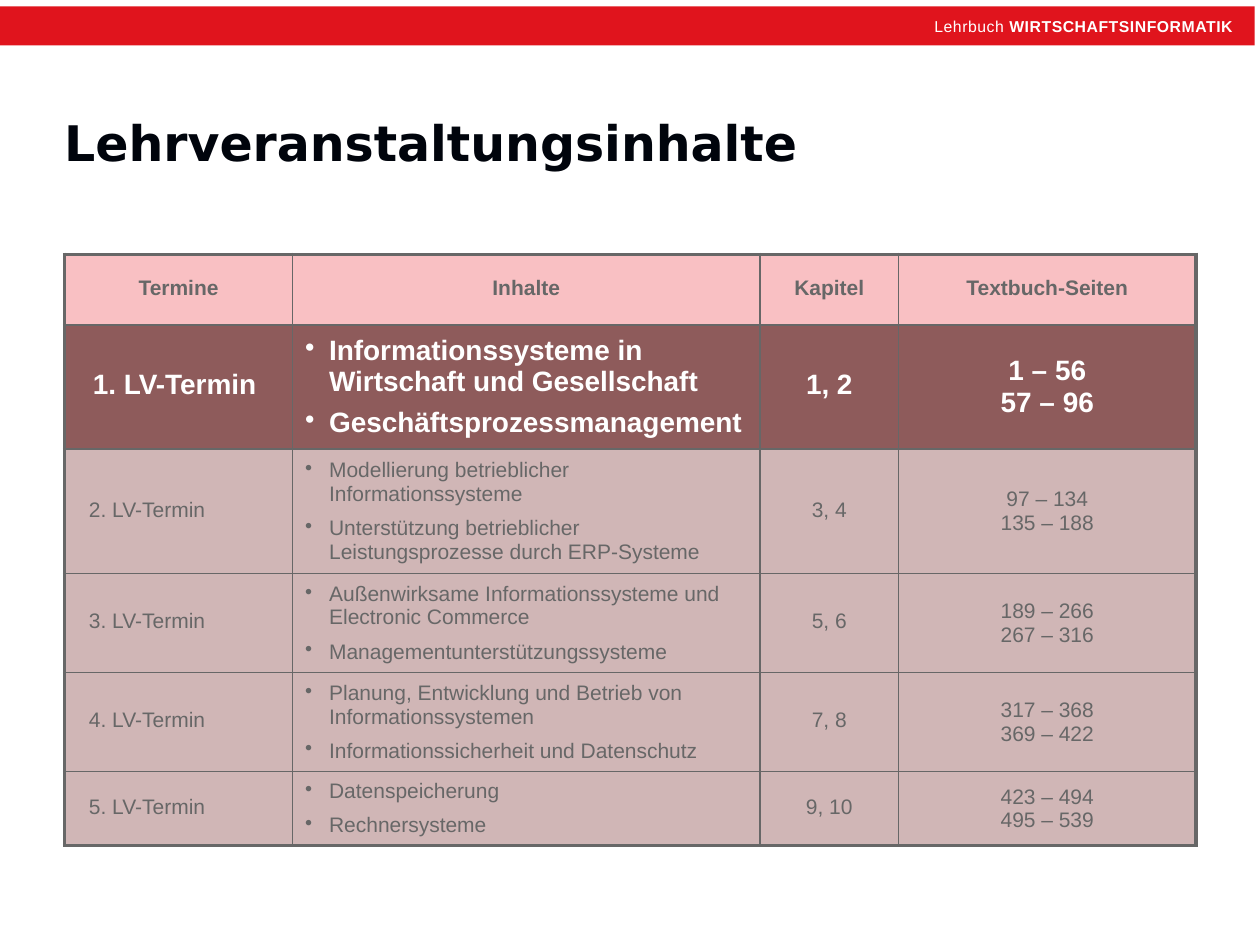
"""Build the course contents slide with its schedule table."""
from lxml.etree import SubElement
from pptx import Presentation
from pptx.dml.color import RGBColor
from pptx.enum.shapes import MSO_SHAPE
from pptx.enum.text import MSO_ANCHOR, MSO_AUTO_SIZE, PP_ALIGN
from pptx.oxml.ns import qn
from pptx.util import Pt

RED = RGBColor(0xE0, 0x14, 0x1D)
WHITE = RGBColor(0xFF, 0xFF, 0xFF)
INK = RGBColor(0x00, 0x04, 0x0C)
GREY = RGBColor(0x67, 0x67, 0x67)
PINK = RGBColor(0xF9, 0xC0, 0xC3)
BROWN = RGBColor(0x8E, 0x5B, 0x5B)
ROSE = RGBColor(0xD0, 0xB6, 0xB6)

ROWS = [
    (["Termine"], ["Inhalte"], ["Kapitel"], ["Textbuch-Seiten"]),
    (["1. LV-Termin"],
     ["Informationssysteme in Wirtschaft und Gesellschaft", "Geschäftsprozessmanagement"],
     ["1, 2"], ["1 – 56", "57 – 96"]),
    (["2. LV-Termin"],
     ["Modellierung betrieblicher Informationssysteme",
      "Unterstützung betrieblicher Leistungsprozesse durch ERP-Systeme"],
     ["3, 4"], ["97 – 134", "135 – 188"]),
    (["3. LV-Termin"],
     ["Außenwirksame Informationssysteme und Electronic Commerce",
      "Managementunterstützungssysteme"],
     ["5, 6"], ["189 – 266", "267 – 316"]),
    (["4. LV-Termin"],
     ["Planung, Entwicklung und Betrieb von Informationssystemen",
      "Informationssicherheit und Datenschutz"],
     ["7, 8"], ["317 – 368", "369 – 422"]),
    (["5. LV-Termin"], ["Datenspeicherung", "Rechnersysteme"],
     ["9, 10"], ["423 – 494", "495 – 539"]),
]
COL_WIDTHS = [130.3, 267.1, 79.2, 170]
ROW_HEIGHTS = [40.3, 70.6, 71.2, 56.6, 56.6, 42.4]


def add_run(p, text, size, color, bold, font="Arial"):
    r = p.add_run()
    r.text = text
    r.font.size = Pt(size)
    r.font.name = font
    r.font.bold = bold
    r.font.color.rgb = color
    return r


def add_border(cell, side, width):
    ln = SubElement(cell._tc.get_or_add_tcPr(), qn(f"a:ln{side}"), w=str(Pt(width)))
    fill = SubElement(ln, qn("a:solidFill"))
    SubElement(fill, qn("a:srgbClr"), val=str(GREY))


prs = Presentation()
prs.slide_width, prs.slide_height = Pt(720), Pt(540)
s = prs.slides.add_slide(prs.slide_layouts[5])

bar = s.shapes.add_shape(MSO_SHAPE.RECTANGLE, Pt(0), Pt(3.6), Pt(717), Pt(22.3))
bar.shadow.inherit = False
bar.fill.solid()
bar.fill.fore_color.rgb = RED
bar.line.fill.background()

header = s.shapes.add_textbox(Pt(445), Pt(5.8), Pt(266.4), Pt(18))
header.text_frame.word_wrap = True
p = header.text_frame.paragraphs[0]
p.alignment = PP_ALIGN.RIGHT
for text, bold in [("Lehrbuch ", False), ("WIRTSCHAFTSINFORMATIK", True)]:
    r = add_run(p, text, 9, WHITE, bold)
    r.font._element.set("spc", "30")

title = s.shapes.title
title.left, title.top, title.width, title.height = Pt(29.5), Pt(51), Pt(648), Pt(60.5)
tf = title.text_frame
tf.auto_size = MSO_AUTO_SIZE.NONE
tf.vertical_anchor = MSO_ANCHOR.MIDDLE
p = tf.paragraphs[0]
p.alignment = PP_ALIGN.LEFT
add_run(p, "Lehrveranstaltungsinhalte", 28, INK, True, "DejaVu Sans")

frame = s.shapes.add_table(len(ROWS), len(COL_WIDTHS), Pt(36.9), Pt(145.4),
                           Pt(sum(COL_WIDTHS)), Pt(sum(ROW_HEIGHTS)))
table = frame.table
table.first_row = False
table.horz_banding = False
for column, width in zip(table.columns, COL_WIDTHS):
    column.width = Pt(width)
for row, height in zip(table.rows, ROW_HEIGHTS):
    row.height = Pt(height)

last_row, last_col = len(ROWS) - 1, len(COL_WIDTHS) - 1
for i, row in enumerate(ROWS):
    fill = {0: PINK, 1: BROWN}.get(i, ROSE)
    size = 16 if i == 1 else 12
    color = WHITE if i == 1 else GREY
    for j, lines in enumerate(row):
        cell = table.cell(i, j)
        cell.vertical_anchor = MSO_ANCHOR.MIDDLE
        cell.margin_left = cell.margin_right = Pt(7.2)
        cell.margin_top = cell.margin_bottom = Pt(3.6)
        for side, outer in [("L", j == 0), ("R", j == last_col),
                            ("T", i == 0), ("B", i == last_row)]:
            add_border(cell, side, 2.25 if outer else 1)
        cell.fill.solid()
        cell.fill.fore_color.rgb = fill
        tf = cell.text_frame
        for n, text in enumerate(lines):
            p = tf.add_paragraph() if n else tf.paragraphs[0]
            if i > 0 and j < 2:
                p.alignment = PP_ALIGN.LEFT
            else:
                p.alignment = PP_ALIGN.CENTER
            if i == 0 or j in (0, 2):
                p.line_spacing = 0.85
            elif j == 1:
                p.space_after = Pt(6)
                pPr = p._p.get_or_add_pPr()
                pPr.set("marL", str(Pt(13.7)))
                pPr.set("indent", str(Pt(-13.7)))
                SubElement(pPr, qn("a:buChar"), char="•")
            add_run(p, text, size, color, i < 2)
        if i > 0 and j == 0:
            cell.margin_left = Pt(7.2 + size * 0.56)

prs.save("out.pptx")
